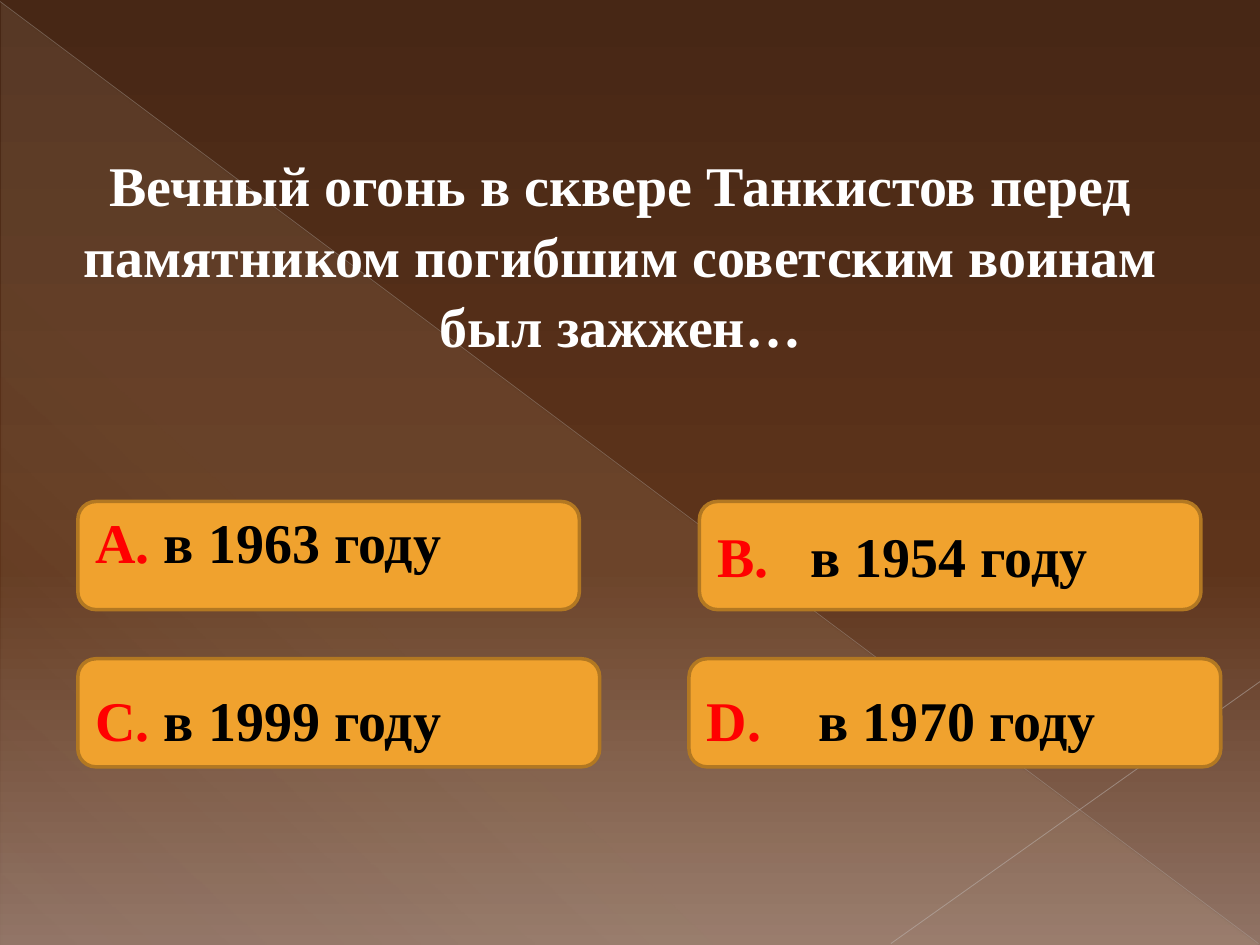
from dataclasses import dataclass
from typing import Optional

from lxml.etree import SubElement
from pptx import Presentation
from pptx.dml.color import RGBColor
from pptx.enum.shapes import MSO_CONNECTOR, MSO_SHAPE
from pptx.enum.text import MSO_ANCHOR, MSO_AUTO_SIZE, PP_ALIGN
from pptx.oxml.ns import qn
from pptx.util import Cm, Pt

FONT = "Times New Roman"
ROW_TOPS = (10.11, 13.28)
ANSWER_HEIGHT = 2.18
INSET = 0.13


@dataclass
class Answer:
    letter: str
    text: str
    left: float
    row: int
    width: float
    tab: Optional[float] = None  # tab stop after the letter, in cm
    extra_top: float = 0
    extra_bottom: float = 0


ANSWERS = [
    Answer("А.", "в 1963 году", 1.57, 0, 10.11, extra_bottom=0.6),
    Answer("С.", "в 1999 году", 1.57, 1, 10.52, extra_top=0.25),
    Answer("В.", "в 1954 году", 14.1, 0, 10.11, tab=1.88),
    Answer("D.", "в 1970 году", 13.89, 1, 10.72, tab=2.26, extra_top=0.25),
]


def color(value: str) -> RGBColor:
    return RGBColor.from_string(value)


def add_text(paragraph, text: str, *, size: float = 32, fill: str = "FFFFFF",
             bold: bool = True) -> None:
    run = paragraph.add_run()
    run.text = text
    run.font.name = FONT
    run.font.size = Pt(size)
    run.font.bold = bold
    run.font.color.rgb = color(fill)


def set_alpha(color_element, percent: float) -> None:
    SubElement(color_element, qn("a:alpha")).set("val", str(round(percent * 1000)))


def set_gradient(owner, fill, stops: list, angle: float) -> None:
    """Fill with (position, colour, opacity) stops; angle is clockwise."""
    fill.gradient()
    fill.gradient_angle = 360 - angle
    stop_list = owner.element.find(".//" + qn("a:gsLst"))
    for old_stop in list(stop_list):
        stop_list.remove(old_stop)
    for position, value, opacity in stops:
        stop = SubElement(stop_list, qn("a:gs"))
        stop.set("pos", str(position * 1000))
        stop_color = SubElement(stop, qn("a:srgbClr"))
        stop_color.set("val", value)
        if opacity < 100:
            set_alpha(stop_color, opacity)


def add_line(slide, start: tuple, end: tuple, value: str, width: float,
             opacity: float) -> None:
    line = slide.shapes.add_connector(
        MSO_CONNECTOR.STRAIGHT, *(Cm(length) for length in start + end))
    line.line.color.rgb = color(value)
    line.line.width = Pt(width)
    set_alpha(line.element.find(".//" + qn("a:ln")).find(".//" + qn("a:srgbClr")), opacity)
    SubElement(line.element.spPr, qn("a:effectLst"))


def add_answer(slide, answer: Answer) -> None:
    shape = slide.shapes.add_shape(
        MSO_SHAPE.FLOWCHART_ALTERNATE_PROCESS, Cm(answer.left),
        Cm(ROW_TOPS[answer.row]), Cm(answer.width), Cm(ANSWER_HEIGHT))
    shape.shadow.inherit = False
    shape.fill.solid()
    shape.fill.fore_color.rgb = color("F0A22E")
    shape.line.color.rgb = color("B27822")
    shape.line.width = Pt(2)

    frame = shape.text_frame
    frame.word_wrap = True
    frame.vertical_anchor = MSO_ANCHOR.MIDDLE
    frame.margin_top = Cm(INSET + answer.extra_top)
    frame.margin_bottom = Cm(INSET + answer.extra_bottom)
    paragraph = frame.paragraphs[0]
    paragraph.alignment = PP_ALIGN.LEFT
    gap = " "
    if answer.tab is not None:
        gap = "\t"
        tab_list = SubElement(paragraph._p.get_or_add_pPr(), qn("a:tabLst"))
        tab = SubElement(tab_list, qn("a:tab"))
        tab.set("pos", str(Cm(answer.tab)))
        tab.set("algn", "l")
    add_text(paragraph, answer.letter + gap, fill="FF0000")
    add_text(paragraph, answer.text, fill="000000")


def add_backdrop(slide) -> None:
    set_gradient(slide, slide.background.fill,
                 [(0, "472715", 100), (60, "5E341B", 100), (100, "907365", 100)], 90)
    triangle = slide.shapes.add_shape(
        MSO_SHAPE.RIGHT_TRIANGLE, Cm(0.03), Cm(0.05), Cm(25.35), Cm(19))
    triangle.shadow.inherit = False
    triangle.line.fill.background()
    set_gradient(triangle, triangle.fill,
                 [(0, "FBEEC9", 10), (70, "FBEEC9", 8), (100, "FBEEC9", 1)], 133)
    add_line(slide, (0, 0.03), (25.37, 19.02), "BCB7B4", 0.39, 35)
    add_line(slide, (25.4, 13.74), (17.96, 19.02), "C4BFBD", 0.47, 45)


def add_question(slide, text: str) -> None:
    title = slide.shapes.title
    title.left, title.top, title.width, title.height = (
        Cm(length) for length in (0.41, 2.84, 24.21, 4.52))
    frame = title.text_frame
    frame.word_wrap = True
    frame.auto_size = MSO_AUTO_SIZE.NONE
    frame.vertical_anchor = MSO_ANCHOR.MIDDLE
    paragraph = frame.paragraphs[0]
    paragraph.alignment = PP_ALIGN.CENTER
    paragraph.line_spacing = 1.05
    add_text(paragraph, text)


def main() -> None:
    presentation = Presentation()
    presentation.slide_width = Cm(25.4)
    presentation.slide_height = Cm(19.05)
    slide = presentation.slides.add_slide(presentation.slide_layouts[5])

    # Background, triangle and thin diagonals
    add_backdrop(slide)

    # Answer buttons
    for answer in ANSWERS:
        add_answer(slide, answer)

    # Question, in front of the backdrop
    add_question(slide, "Вечный огонь в сквере Танкистов перед памятником "
                        "погибшим советским воинам был зажжен…")
    slide.shapes._spTree.append(slide.shapes.title.element)

    presentation.save("out.pptx")


if __name__ == "__main__":
    main()
